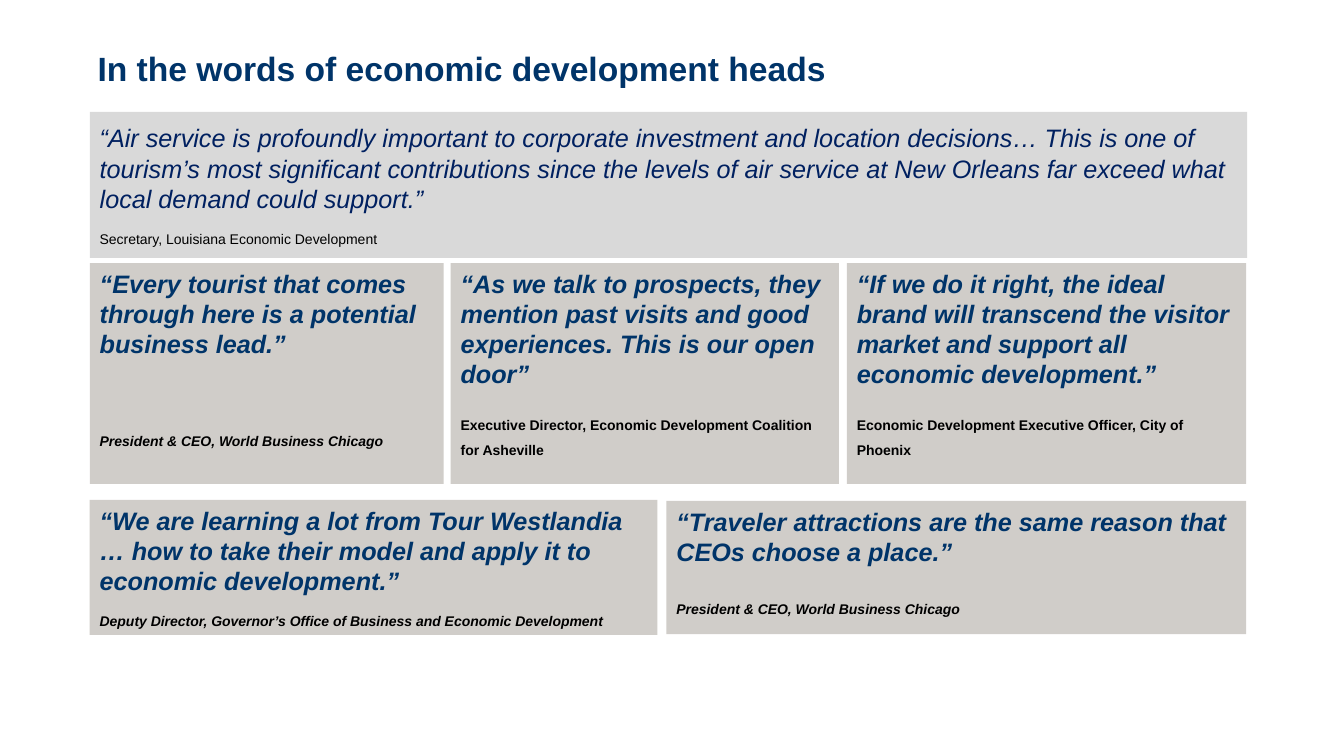
from dataclasses import dataclass

from pptx import Presentation
from pptx.dml.color import RGBColor
from pptx.enum import shapes, text
from pptx.util import Inches, Pt


@dataclass(frozen=True)
class Theme:
    font: str = "Arial"
    navy: str = "003469"
    deep_navy: str = "002060"
    black: str = "000000"
    light_gray: str = "D9D9D9"
    warm_gray: str = "D0CDC9"
    title_size: float = 24
    quote_size: float = 18
    speaker_size: float = 10


THEME = Theme()


@dataclass(frozen=True)
class Quote:
    left: float
    top: float
    width: float
    height: float
    words: str
    speaker: str
    gap: float  # points between the quote and its speaker
    speaker_spacing: float = 1.0
    speaker_after: float = 0
    speaker_italic: bool = False
    bold: bool = True
    color: str = THEME.navy
    fill: str = THEME.warm_gray
    anchor: text.MSO_ANCHOR = text.MSO_ANCHOR.TOP


LEFT, MIDDLE_TOP, MIDDLE_HEIGHT = 0.89, 2.61, 2.19

QUOTES = [
    # Lead quote across the full width
    Quote(LEFT, 1.11, 11.48, 1.45,
          "“Air service is profoundly important to corporate investment and location "
          "decisions… This is one of tourism’s most significant contributions since the "
          "levels of air service at New Orleans far exceed what local demand could support.”",
          "Secretary, Louisiana Economic Development", gap=12, bold=False,
          color=THEME.deep_navy, fill=THEME.light_gray, anchor=text.MSO_ANCHOR.MIDDLE),
    # Middle row
    Quote(LEFT, MIDDLE_TOP, 3.51, MIDDLE_HEIGHT,
          "“Every tourist that comes through here is a potential business lead.”",
          "President & CEO, World Business Chicago", gap=46.5,
          speaker_spacing=1.5, speaker_after=7, speaker_italic=True),
    Quote(4.47, MIDDLE_TOP, 3.85, MIDDLE_HEIGHT,
          "“As we talk to prospects, they mention past visits and good experiences. "
          "This is our open door”",
          "Executive Director, Economic Development Coalition for Asheville", gap=13.5,
          speaker_spacing=1.5, speaker_after=7),
    Quote(8.4, MIDDLE_TOP, 3.96, MIDDLE_HEIGHT,
          "“If we do it right, the ideal brand will transcend the visitor market and "
          "support all economic development.”",
          "Economic Development Executive Officer, City of Phoenix", gap=13.5,
          speaker_spacing=1.5, speaker_after=7),
    # Bottom row
    Quote(LEFT, 4.96, 5.63, 1.34,
          "“We are learning a lot from Tour Westlandia … how to take their model and "
          "apply it to economic development.”",
          "Deputy Director, Governor’s Office of Business and Economic Development",
          gap=12, speaker_italic=True),
    Quote(6.61, 4.97, 5.75, 1.32,
          "“Traveler attractions are the same reason that CEOs choose a place.”",
          "President & CEO, World Business Chicago", gap=24, speaker_italic=True),
]


def write(para, words: str, *, size: float, color: str, bold: bool = False,
          italic: bool = False, spacing: float = 1.0, before: float = 0,
          after: float = 0) -> None:
    """Add one formatted span to a paragraph."""
    para.alignment = text.PP_ALIGN.LEFT
    para.line_spacing = spacing
    if before:
        para.space_before = Pt(before)
    para.space_after = Pt(after)
    span = para.add_run()
    span.text = words
    span.font.name = THEME.font
    span.font.size = Pt(size)
    span.font.bold = bold
    span.font.italic = italic
    span.font.color.rgb = RGBColor.from_string(color)


def draw_title(page, words: str) -> None:
    box = page.shapes.add_textbox(Inches(0.87), Inches(0.3), Inches(11.47), Inches(0.81))
    frame = box.text_frame
    frame.word_wrap = True
    frame.vertical_anchor = text.MSO_ANCHOR.MIDDLE
    write(frame.paragraphs[0], words, size=THEME.title_size, color=THEME.navy,
          bold=True, spacing=0.9)


def draw_quote(page, quote: Quote) -> None:
    box = page.shapes.add_shape(
        shapes.MSO_SHAPE.RECTANGLE, Inches(quote.left), Inches(quote.top),
        Inches(quote.width), Inches(quote.height))
    box.shadow.inherit = False
    box.fill.solid()
    box.fill.fore_color.rgb = RGBColor.from_string(quote.fill)
    box.line.fill.background()
    frame = box.text_frame
    frame.word_wrap = True
    frame.vertical_anchor = quote.anchor
    write(frame.paragraphs[0], quote.words, size=THEME.quote_size, color=quote.color,
          bold=quote.bold, italic=True)
    write(frame.add_paragraph(), quote.speaker, size=THEME.speaker_size,
          color=THEME.black, bold=quote.bold, italic=quote.speaker_italic,
          spacing=quote.speaker_spacing, before=quote.gap, after=quote.speaker_after)


def main() -> None:
    deck = Presentation()
    deck.slide_width, deck.slide_height = Inches(13.33), Inches(7.5)
    page = deck.slides.add_slide(deck.slide_layouts[6])
    draw_title(page, "In the words of economic development heads")
    for quote in QUOTES:
        draw_quote(page, quote)
    deck.save("out.pptx")


if __name__ == "__main__":
    main()
